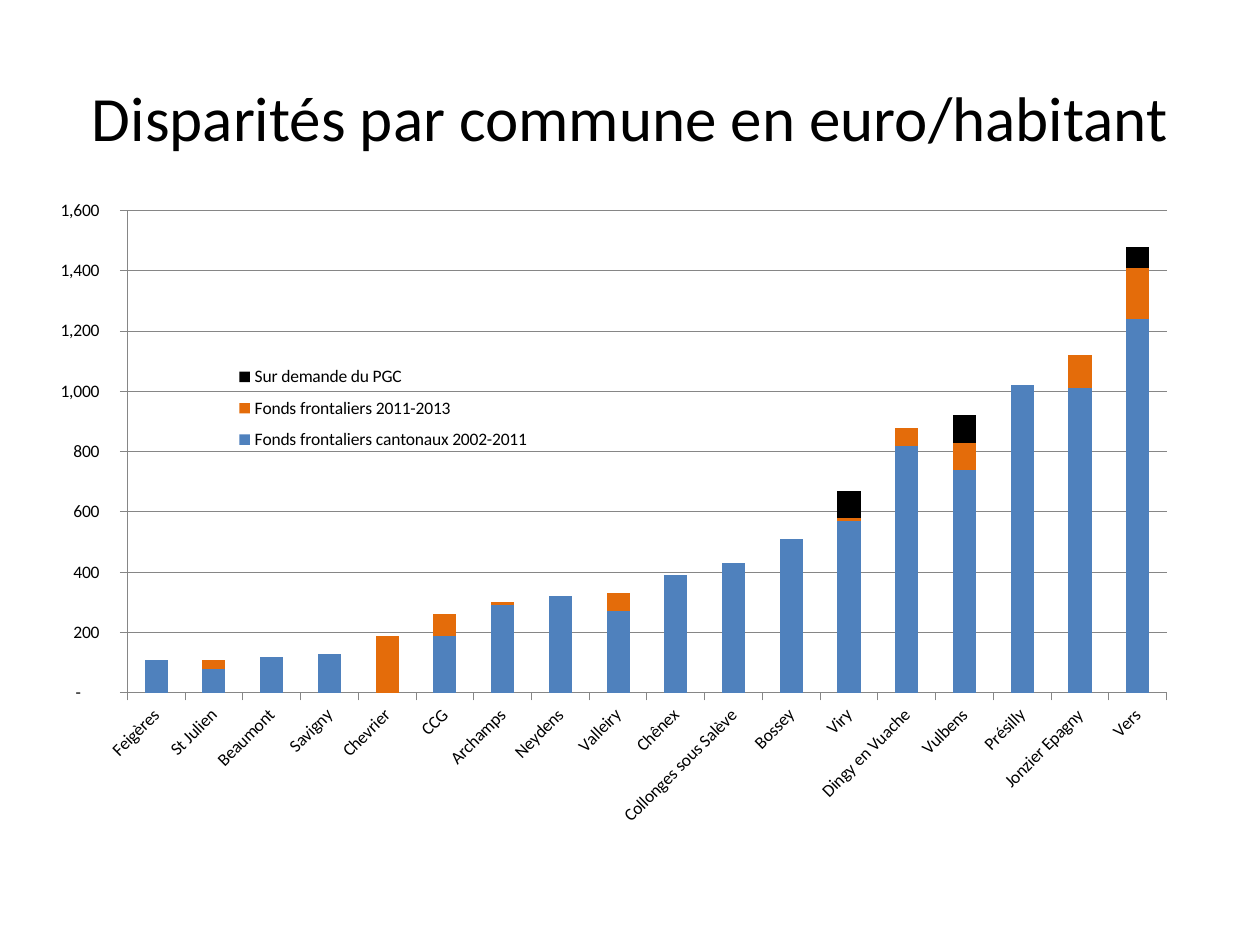
from dataclasses import dataclass

from lxml.etree import Element, SubElement
from pptx import Presentation
from pptx.chart.data import CategoryChartData
from pptx.dml.color import RGBColor
from pptx.enum.chart import XL_CHART_TYPE, XL_LEGEND_POSITION, XL_TICK_MARK
from pptx.enum.text import MSO_ANCHOR, PP_ALIGN
from pptx.oxml.ns import qn
from pptx.util import Inches, Pt


@dataclass(frozen=True)
class Theme:
    """Colours, font and type sizes of the slide."""
    font: str = "Calibri"
    text: RGBColor = RGBColor(0x00, 0x00, 0x00)
    grid: RGBColor = RGBColor(0x86, 0x86, 0x86)
    cantonal: RGBColor = RGBColor(0x4F, 0x81, 0xBD)
    recent: RGBColor = RGBColor(0xE4, 0x6C, 0x0A)
    pgc: RGBColor = RGBColor(0x00, 0x00, 0x00)
    title_size: Pt = Pt(36)
    chart_size: Pt = Pt(10)


THEME = Theme()
NUMBER_FORMAT = r'_-* #,##0\ _€_-;\-* #,##0\ _€_-;_-* "-"??\ _€_-;_-@_-'
SERIES = (
    ("Fonds frontaliers cantonaux 2002-2011", THEME.cantonal),
    ("Fonds frontaliers 2011-2013", THEME.recent),
    ("Sur demande du PGC", THEME.pgc),
)
COMMUNES = (
    ("Feigères", 110, 0, 0),
    ("St Julien", 80, 30, 0),
    ("Beaumont", 120, 0, 0),
    ("Savigny", 130, 0, 0),
    ("Chevrier", 0, 190, 0),
    ("CCG", 190, 70, 0),
    ("Archamps", 290, 10, 0),
    ("Neydens", 320, 0, 0),
    ("Valleiry", 270, 60, 0),
    ("Chênex", 390, 0, 0),
    ("Collonges sous Salève", 430, 0, 0),
    ("Bossey", 510, 0, 0),
    ("Viry", 570, 10, 90),
    ("Dingy en Vuache", 820, 60, 0),
    ("Vulbens", 740, 90, 90),
    ("Présilly", 1020, 0, 0),
    ("Jonzier Epagny", 1010, 110, 0),
    ("Vers", 1240, 170, 70),
)


def style_font(font, size):
    """Apply the theme's face and text colour at the given size."""
    font.name = THEME.font
    font.size = size
    font.color.rgb = THEME.text


def set_layout(parent, index, box, frame, inner=False):
    """Give a chart part a manual layout, its box measured inside the frame."""
    for old in parent.findall(qn("c:layout")):
        parent.remove(old)
    layout = Element(qn("c:layout"))
    manual = SubElement(layout, qn("c:manualLayout"))
    if inner:
        SubElement(manual, qn("c:layoutTarget")).set("val", "inner")
    for tag in ("xMode", "yMode"):
        SubElement(manual, qn(f"c:{tag}")).set("val", "edge")
    for tag, length, whole in zip("xywh", box, frame * 2):
        SubElement(manual, qn(f"c:{tag}")).set("val", str(length / whole))
    parent.insert(index, layout)


def add_title(slide, text, left, top, width, height):
    """Place the title placeholder in its box."""
    sp = slide.shapes.title
    sp.left, sp.top, sp.width, sp.height = left, top, width, height
    tf = sp.text_frame
    tf.text = text
    tf.word_wrap = True
    tf.vertical_anchor = MSO_ANCHOR.MIDDLE
    p = tf.paragraphs[0]
    p.alignment = PP_ALIGN.CENTER
    style_font(p.runs[0].font, THEME.title_size)


def style_axes(chart):
    """Set the scale, grid, ticks and slanted commune names."""
    value_axis, category_axis = chart.value_axis, chart.category_axis
    value_axis.minimum_scale, value_axis.maximum_scale = 0, 1600
    value_axis.major_unit = 200
    value_axis.has_major_gridlines = True
    labels = value_axis.tick_labels
    labels.number_format = NUMBER_FORMAT
    labels.number_format_is_linked = False
    lines = [value_axis.major_gridlines.format.line]
    for axis in (value_axis, category_axis):
        axis.major_tick_mark = XL_TICK_MARK.OUTSIDE
        axis.minor_tick_mark = XL_TICK_MARK.NONE
        style_font(axis.tick_labels.font, THEME.chart_size)
        lines.append(axis.format.line)
    for line in lines:
        line.color.rgb = THEME.grid
        line.width = Pt(0.5)
    body = category_axis._element.find(qn("c:txPr")).find(qn("a:bodyPr"))
    body.set("rot", "-2700000")
    body.set("vert", "horz")


def add_funds_chart(slide, left, top, width, height):
    """Place the stacked columns of funds per inhabitant."""
    names, *columns = zip(*COMMUNES)
    data = CategoryChartData(number_format=NUMBER_FORMAT)
    data.categories = names
    for (name, _), values in zip(SERIES, columns):
        data.add_series(name, values)
    chart = slide.shapes.add_chart(
        XL_CHART_TYPE.COLUMN_STACKED, left, top, width, height, data).chart
    chart.has_title = False
    style_font(chart.font, THEME.chart_size)
    plot = chart.plots[0]
    plot.gap_width, plot.overlap = 150, 100
    plot.vary_by_categories = False
    for series, (_, color) in zip(plot.series, SERIES):
        series.format.fill.solid()
        series.format.fill.fore_color.rgb = color
    style_axes(chart)
    chart.has_legend = True
    legend = chart.legend
    legend.position = XL_LEGEND_POSITION.RIGHT
    legend.include_in_layout = False
    style_font(legend.font, THEME.chart_size)
    frame = (width, height)
    legend_box = (Inches(1.5), Inches(1.3), Inches(2.38), Inches(0.84))
    plot_box = (Inches(0.66), Inches(0.15), Inches(8.25), Inches(3.83))
    set_layout(legend._element, 1, legend_box, frame)
    set_layout(chart._chartSpace.chart.plotArea, 0, plot_box, frame, inner=True)


def main():
    """Build the slide and save it."""
    prs = Presentation()
    prs.slide_width, prs.slide_height = Inches(10), Inches(7.5)
    s = prs.slides.add_slide(prs.slide_layouts[5])
    add_title(s, "Disparités par commune en euro/habitant",
              Inches(0.5), Inches(0.3), Inches(9), Inches(1.25))
    add_funds_chart(s, Inches(0.35), Inches(1.52), Inches(9.45), Inches(5.15))
    prs.save("out.pptx")


if __name__ == "__main__":
    main()
